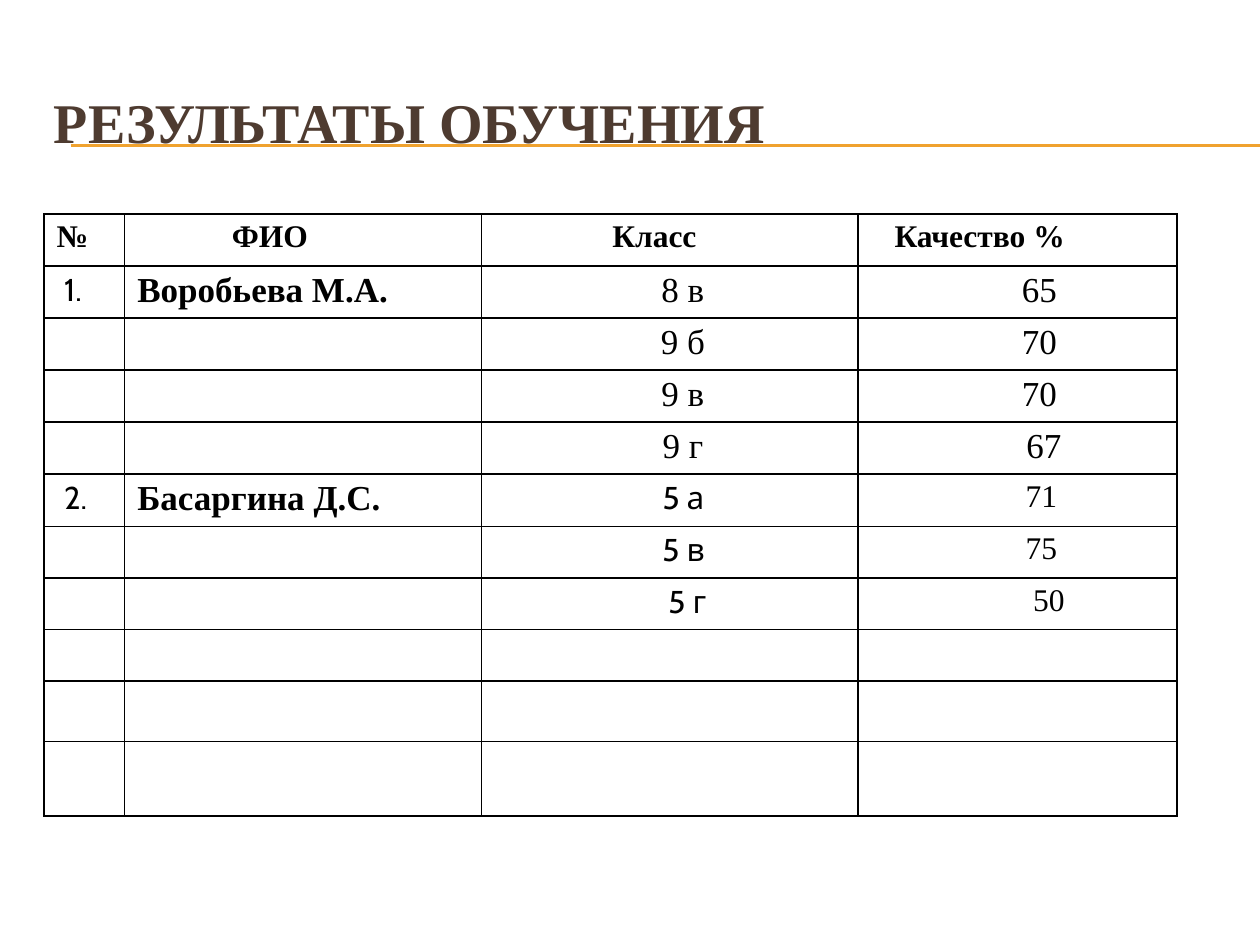
import pptx
import pptx.dml.color
import pptx.enum.shapes
import pptx.enum.text
import pptx.oxml
import pptx.oxml.ns
import pptx.util
from pptx.util import Inches

SERIF, SANS = "Times New Roman", "Cabin"
BLACK, BROWN, AMBER = "000000", "4E3B30", "F0A22E"
LEFT, CENTER = pptx.enum.text.PP_ALIGN.LEFT, pptx.enum.text.PP_ALIGN.CENTER

COL_WIDTHS = [0.64, 2.83, 2.99, 2.53]
ROW_HEIGHTS = [0.41] * 9 + [0.48, 0.59]

# Each entry is text and its indent in inches.
HEADERS = [("№", 0), ("ФИО", 0.75), ("Класс", 0.94), ("Качество %", 0.19)]
# Teacher, font and size of class, font size of quality, (class, indent, quality, indent)
TEACHERS = [
    ("Воробьева М.А.", SERIF, 20, 20, [
        ("8 в", 0.21, "65", 0.35),
        ("9 б", 0.21, "70", 0.35),
        ("9 в", 0.21, "70", 0.35),
        ("9 г", 0.21, "67", 0.42),
    ]),
    ("Басаргина Д.С.", SANS, 18, 18, [
        ("5 а", 0.22, "71", 0.38),
        ("5 в", 0.22, "75", 0.38),
        ("5 г", 0.28, "50", 0.5),
    ]),
]


def rgb(color):
    return pptx.dml.color.RGBColor.from_string(color)


def write(tf, text, size, font=SERIF, bold=False, color=BLACK, align=LEFT):
    p = tf.paragraphs[0]
    p.alignment = align
    r = p.add_run()
    r.text = text
    r.font.name, r.font.size, r.font.bold = font, pptx.util.Pt(size), bold
    r.font.color.rgb = rgb(color)


def fill_cell(cell, text, indent, size, **style):
    cell.margin_left = Inches(0.1 + indent)
    write(cell.text_frame, text, size, **style)


def border_cell(cell):
    """Draw thin black lines on all four sides, under a clear fill."""
    tc_pr = cell._tc.get_or_add_tcPr()
    for side in ("lnL", "lnR", "lnT", "lnB"):
        tc_pr.append(pptx.oxml.parse_xml(
            f'<a:{side} {pptx.oxml.ns.nsdecls("a")} w="12700"><a:solidFill>'
            f'<a:srgbClr val="{BLACK}"/></a:solidFill></a:{side}>'))
    cell.fill.background()


def add_rule(slide, x1, x2, y):
    line = slide.shapes.add_connector(
        pptx.enum.shapes.MSO_CONNECTOR.STRAIGHT,
        Inches(x1), Inches(y), Inches(x2), Inches(y))
    line.line.color.rgb = rgb(AMBER)
    line.line.width = pptx.util.Pt(0.75)
    line._element.spPr.append(pptx.oxml.parse_xml(
        f'<a:effectLst {pptx.oxml.ns.nsdecls("a")}/>'))


def add_title(slide, left, top, width, height):
    for offset in (0.65, 0.66):
        add_rule(slide, left + 0.23, 10, top + offset)
    sp = slide.shapes.add_textbox(
        Inches(left), Inches(top), Inches(width), Inches(height))
    tf = sp.text_frame
    tf.word_wrap = True
    tf.vertical_anchor = pptx.enum.text.MSO_ANCHOR.MIDDLE
    write(tf, "РЕЗУЛЬТАТЫ ОБУЧЕНИЯ", 32, bold=True, color=BROWN)


def add_results(slide, left, top):
    table = slide.shapes.add_table(
        len(ROW_HEIGHTS), len(COL_WIDTHS), Inches(left), Inches(top),
        Inches(sum(COL_WIDTHS)), Inches(sum(ROW_HEIGHTS))).table
    table.first_row = table.horz_banding = False
    for column, width in zip(table.columns, COL_WIDTHS):
        column.width = Inches(width)
    for row, height in zip(table.rows, ROW_HEIGHTS):
        row.height = Inches(height)
    for cell in table.iter_cells():
        cell.margin_top = cell.margin_bottom = Inches(0.04)
        border_cell(cell)

    for col, (text, indent) in enumerate(HEADERS):
        fill_cell(table.cell(0, col), text, indent, 18, bold=True)
    row = 1
    for number, (name, font, class_size, quality_size, results) in enumerate(TEACHERS, 1):
        fill_cell(table.cell(row, 0), f"{number}.", 0.06, 18, font=SANS)
        fill_cell(table.cell(row, 1), name, 0, 20, bold=True)
        for group, group_indent, quality, quality_indent in results:
            fill_cell(table.cell(row, 2), group, group_indent, class_size,
                      font=font, align=CENTER)
            fill_cell(table.cell(row, 3), quality, quality_indent, quality_size,
                      align=CENTER)
            row += 1


def main():
    prs = pptx.Presentation()
    prs.slide_width, prs.slide_height = Inches(10), Inches(7.5)
    slide = prs.slides.add_slide(prs.slide_layouts[6])
    add_title(slide, 0.33, 0.5, 9.5, 0.92)
    add_results(slide, 0.35, 1.7)
    prs.save("out.pptx")


if __name__ == "__main__":
    main()
